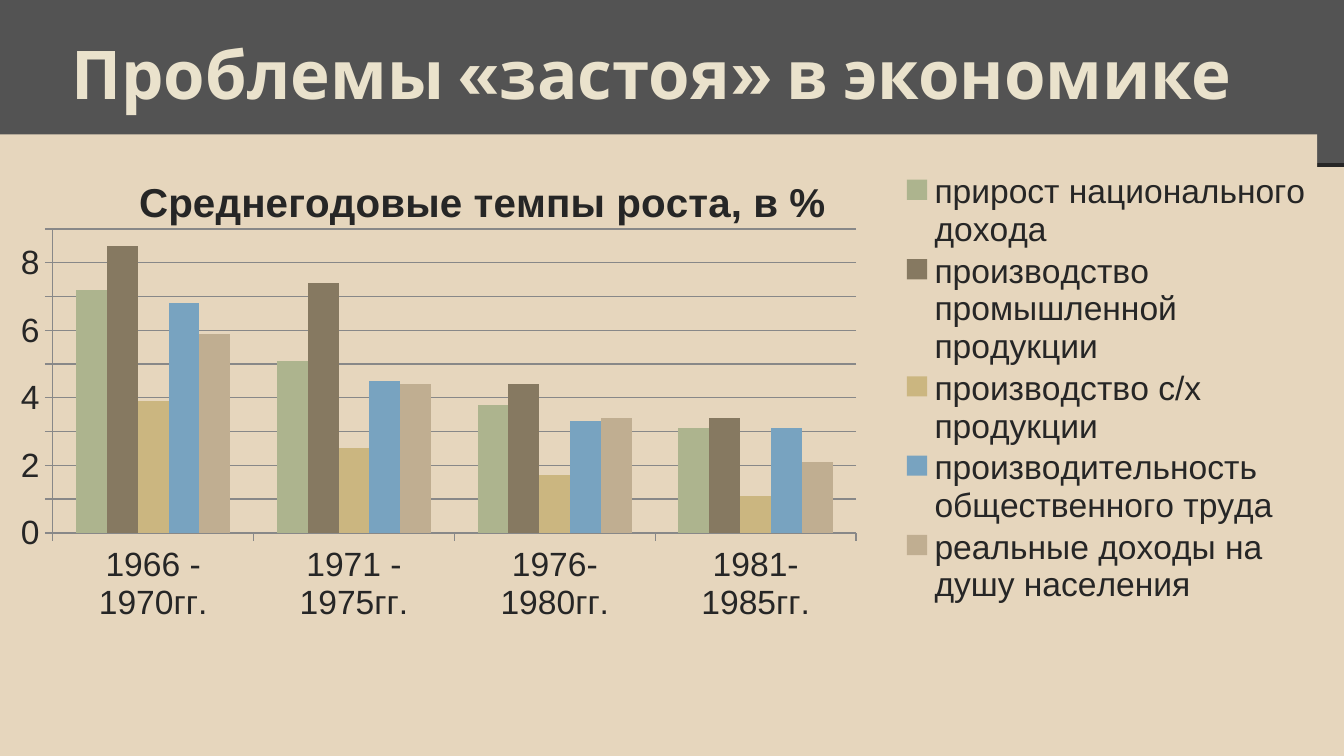
import lxml.etree
import pptx
import pptx.chart.data
import pptx.dml.color
import pptx.enum.chart
import pptx.enum.shapes
import pptx.enum.text
import pptx.oxml
import pptx.oxml.ns
import pptx.util

Pt = pptx.util.Pt
qn = pptx.oxml.ns.qn
enum = pptx.enum

theme = {
    "paper": "E6D6BD", "band": "535353", "ink": "262626",
    "title": "EAE2CC", "grid": "888888",
    "head font": "Cabin", "font": "Arial",
    "head size": 36, "chart title": 21.6, "size": 18,
}
cats = ["1966 - 1970гг.", "1971 - 1975гг.", "1976-1980гг.", "1981-1985гг."]
series = [
    ("прирост национального дохода", "ADB48E", (7.2, 5.1, 3.8, 3.1)),
    ("производство промышленной продукции", "867961", (8.5, 7.4, 4.4, 3.4)),
    ("производство с/х продукции", "CBB680", (3.9, 2.5, 1.7, 1.1)),
    ("производительность общественного труда", "78A3C0", (6.8, 4.5, 3.3, 3.1)),
    ("реальные доходы на душу населения", "C0AE91", (5.9, 4.4, 3.4, 2.1)),
]


def color(name):
    return pptx.dml.color.RGBColor.from_string(theme.get(name, name))


def place(part, x, y, w=None, h=None, inner=False):
    """Fix a chart part at fractions of the chart's width and height."""
    for old in part.findall(qn("c:layout")):
        part.remove(old)
    layout = lxml.etree.Element(qn("c:layout"))
    box = lxml.etree.SubElement(layout, qn("c:manualLayout"))
    vals = [("layoutTarget", "inner" if inner else None),
            ("xMode", "edge"), ("yMode", "edge"),
            ("x", x), ("y", y), ("w", w), ("h", h)]
    for tag, val in vals:
        if val is not None:
            lxml.etree.SubElement(box, qn("c:" + tag)).set("val", str(val))
    over = part.find(qn("c:overlay"))
    if over is None:
        part.insert(0, layout)
    else:
        over.addprevious(layout)


deck = pptx.Presentation()
deck.slide_width, deck.slide_height = Pt(720), Pt(405)
slide = deck.slides.add_slide(deck.slide_layouts[5])
slide.background.fill.solid()
slide.background.fill.fore_color.rgb = color("paper")
shapes = slide.shapes

# Header band and its lower edge
band = shapes.add_shape(enum.shapes.MSO_SHAPE.RECTANGLE, 0, 0, Pt(720), Pt(88.5))
band.shadow.inherit = False
band.fill.solid()
band.fill.fore_color.rgb = color("band")
band.line.fill.background()
edge = shapes.add_connector(
    enum.shapes.MSO_CONNECTOR.STRAIGHT, 0, Pt(88.5), Pt(720), Pt(88.5))
edge.line.color.rgb = color("ink")
edge.line.width = Pt(2.25)
lxml.etree.SubElement(edge._element.spPr, qn("a:effectLst"))

# Title, brought in front of the band
title = shapes.title
title.left, title.top, title.width, title.height = Pt(31), 0, Pt(648), Pt(67.5)
edge._element.addnext(title._element)
frame = title.text_frame
frame.text = "Проблемы «застоя» в экономике"
frame.word_wrap = True
frame.auto_size = enum.text.MSO_AUTO_SIZE.NONE
frame.vertical_anchor = enum.text.MSO_ANCHOR.BOTTOM
frame.margin_left = frame.margin_right = Pt(7.2)
frame.margin_top = frame.margin_bottom = Pt(7.2)
para = frame.paragraphs[0]
para.alignment = enum.text.PP_ALIGN.LEFT
font = para.runs[0].font
font.name, font.size, font.bold = theme["head font"], Pt(theme["head size"]), True
font.color.rgb = color("title")

# Growth chart
data = pptx.chart.data.CategoryChartData()
data.categories = cats
for name, _, vals in series:
    data.add_series(name, vals)
chart = shapes.add_chart(
    enum.chart.XL_CHART_TYPE.COLUMN_CLUSTERED,
    0, Pt(72), Pt(705.6), Pt(267), data).chart
chart.font.name, chart.font.size = theme["font"], Pt(theme["size"])
chart.font.color.rgb = color("ink")

chart.has_title = True
head = chart.chart_title.text_frame
head.text = "Среднегодовые темпы роста, в %"
font = head.paragraphs[0].runs[0].font
font.name, font.size, font.bold = theme["font"], Pt(theme["chart title"]), True
font.color.rgb = color("ink")

chart.has_legend = True
chart.legend.position = enum.chart.XL_LEGEND_POSITION.RIGHT
chart.legend.include_in_layout = False

plot = chart.plots[0]
plot.vary_by_categories = False
plot.gap_width, plot.overlap = 150, 0
for bars, (_, tint, _) in zip(plot.series, series):
    bars.format.fill.solid()
    bars.format.fill.fore_color.rgb = color(tint)

rise = chart.value_axis
rise.minimum_scale, rise.maximum_scale, rise.major_unit = 0, 9, 1
rise.has_major_gridlines = True
rise.tick_labels.number_format = "General"
rise.tick_labels.number_format_is_linked = False
for axis in (rise, chart.category_axis):
    axis.major_tick_mark = enum.chart.XL_TICK_MARK.OUTSIDE
    axis.format.line.color.rgb = color("grid")
    axis.format.line.width = Pt(0.75)
grid = rise.major_gridlines.format.line
grid.color.rgb = color("grid")
grid.width = Pt(0.75)

body = chart._chartSpace.chart
place(chart.chart_title._element, 0.1, 0.07)
place(body.plotArea, 0.04, 0.19, 0.61, 0.61, inner=True)
place(chart.legend._element, 0.68, 0.07, 0.32, 0.88)
body.addnext(pptx.oxml.parse_xml(
    f'<c:spPr {pptx.oxml.ns.nsdecls("c", "a")}><a:solidFill>'
    f'<a:srgbClr val="{theme["paper"]}"/></a:solidFill>'
    '<a:ln><a:noFill/></a:ln></c:spPr>'))

deck.save("out.pptx")
